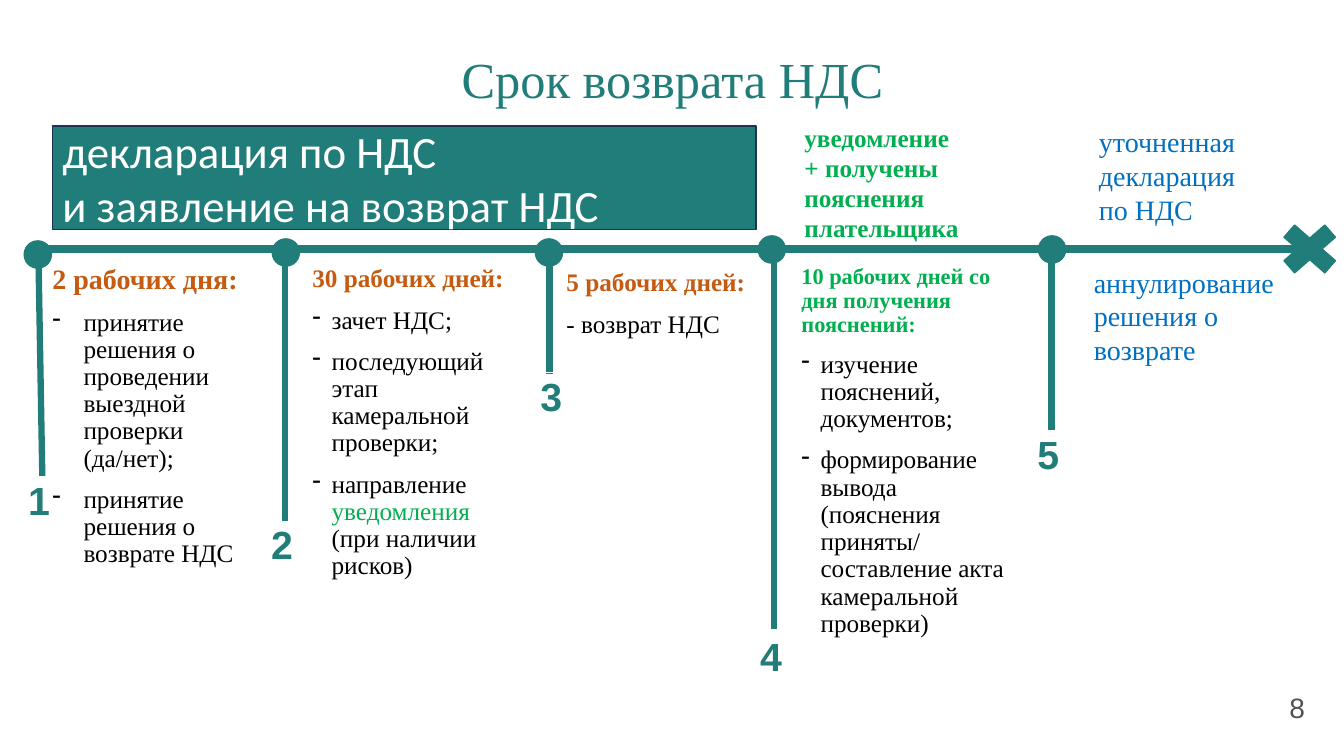
from lxml.etree import SubElement
from pptx import Presentation
from pptx.dml.color import RGBColor
from pptx.enum.shapes import MSO_CONNECTOR, MSO_SHAPE
from pptx.enum.text import MSO_ANCHOR, PP_ALIGN
from pptx.oxml.ns import qn
from pptx.util import Inches, Pt

TEAL = RGBColor(0x21, 0x7D, 0x79)
NAVY = RGBColor(0x1E, 0x32, 0x56)
ORANGE = RGBColor(0xC5, 0x5A, 0x11)
GREEN = RGBColor(0x00, 0xB0, 0x50)
BLUE = RGBColor(0x00, 0x70, 0xC0)
GRAY = RGBColor(0x52, 0x52, 0x52)
BLACK = RGBColor(0, 0, 0)
WHITE = RGBColor(0xFF, 0xFF, 0xFF)
SERIF = "Times New Roman"
DOT = 0.27

STAGES = [
    ((0.24, 2.39), (0.38, 2.47), (0.42, 4.73), (0.18, 4.73)),
    ((2.7, 2.37), (2.83, 2.5), (2.83, 5.18), (2.59, 5.17)),
    ((5.31, 2.37), (5.45, 2.46), (5.45, 3.71), (5.26, 3.7)),
    ((7.52, 2.34), (7.68, 2.47), (7.68, 6.24), (7.44, 6.28)),
    ((10.3, 2.34), (10.43, 2.47), (10.43, 4.27), (10.19, 4.27)),
]

DETAILS = [
    ((0.42, 2.58, 2.28, 3.35), ("2 рабочих дня:", 20, ORANGE), 0.31, [
        [("принятие решения о проведении выездной проверки (да/нет);", BLACK)],
        [("принятие решения о возврате НДС", BLACK)],
    ]),
    ((3, 2.59, 2.15, 3.66), ("30 рабочих дней:", 18, ORANGE), 0.19, [
        [("зачет НДС;", BLACK)],
        [("последующий этап камеральной проверки;", BLACK)],
        [("направление ", BLACK), ("уведомления", GREEN), (" (при наличии рисков)", BLACK)],
    ]),
    ((5.52, 2.63, 1.98, 0.92), ("5 рабочих дней:", 18, ORANGE), 0, [
        [("- возврат НДС", BLACK)],
    ]),
    ((7.85, 2.58, 2.28, 3.95),
     ("10 рабочих дней со дня получения пояснений:", 16, GREEN), 0.19, [
        [("изучение пояснений, документов;", BLACK)],
        [("формирование вывода (пояснения приняты/ составление акта камеральной проверки)",
          BLACK)],
    ]),
]


def add_run(paragraph, text, size, color, font=SERIF, bold=False):
    """Append one formatted run."""
    run = paragraph.add_run()
    run.text = text
    run.font.name = font
    run.font.size = Pt(size)
    run.font.bold = bold
    run.font.color.rgb = color


def add_paragraph(frame, first, spaced=False):
    """Return the first or a new left-aligned paragraph, tight and spaced on request."""
    paragraph = frame.paragraphs[0] if first else frame.add_paragraph()
    paragraph.alignment = PP_ALIGN.LEFT
    if spaced:
        paragraph.line_spacing = 0.9
        paragraph.space_before = Pt(10)
    return paragraph


def add_dash(paragraph, indent):
    """Give a paragraph a hanging dash bullet."""
    properties = paragraph._p.get_or_add_pPr()
    properties.set("marL", str(Inches(indent)))
    properties.set("indent", str(-Inches(indent)))
    SubElement(properties, qn("a:buChar")).set("char", "-")


def add_frame(slide, box, anchor=MSO_ANCHOR.TOP):
    """Add a wrapping text box and return its text frame."""
    frame = slide.shapes.add_textbox(*map(Inches, box)).text_frame
    frame.word_wrap = True
    frame.vertical_anchor = anchor
    return frame


def add_lines(frame, lines, size, color, font=SERIF, bold=False, spaced=False):
    """Fill a frame with equally formatted paragraphs."""
    for index, line in enumerate(lines):
        add_run(add_paragraph(frame, index == 0, spaced), line, size, color, font, bold)


def add_figure(slide, kind, box, fill, outline, width=1):
    """Add a preset shape without a shadow."""
    figure = slide.shapes.add_shape(kind, *map(Inches, box))
    figure.shadow.inherit = False
    if fill is None:
        figure.fill.background()
    else:
        figure.fill.solid()
        figure.fill.fore_color.rgb = fill
    figure.line.color.rgb = outline
    figure.line.width = Pt(width)
    return figure


def add_line(slide, start, end, width):
    """Add a straight teal line."""
    line = slide.shapes.add_connector(MSO_CONNECTOR.STRAIGHT, *map(Inches, start + end))
    line.line.color.rgb = TEAL
    line.line.width = Pt(width)
    SubElement(line._element.spPr, qn("a:effectLst"))


def add_details(slide, box, heading, indent, items):
    """Add a stage's deadline heading and its actions."""
    frame = add_frame(slide, box)
    text, size, color = heading
    add_run(add_paragraph(frame, True, True), text, size, color, bold=True)
    for item in items:
        paragraph = add_paragraph(frame, False, True)
        if indent:
            add_dash(paragraph, indent)
        for words, shade in item:
            add_run(paragraph, words, 18, shade)


def add_number(slide, number, corner):
    """Add a stage number below its stem."""
    label = add_figure(slide, MSO_SHAPE.RECTANGLE, corner + (0.48, 0.53), None, WHITE, 0.75)
    label.text_frame.vertical_anchor = MSO_ANCHOR.TOP
    add_lines(label.text_frame, [str(number)], 28, TEAL, "Arial", True, True)


def main():
    """Build the VAT refund timeline slide."""
    deck = Presentation()
    deck.slide_width, deck.slide_height = Inches(13.33), Inches(7.5)
    slide = deck.slides.add_slide(deck.slide_layouts[6])

    title = add_frame(slide, (0.92, 0.55, 11.5, 0.54), MSO_ANCHOR.MIDDLE)
    add_lines(title, ["Срок возврата НДС"], 36, TEAL)
    title.paragraphs[0].alignment = PP_ALIGN.CENTER
    title.paragraphs[0].line_spacing = 0.9
    page_number = add_frame(slide, (12.69, 6.84, 0.39, 0.39))
    add_lines(page_number, ["8"], 20, GRAY, "Arial", spaced=True)

    add_line(slide, (0.38, 2.47), (12.96, 2.47), 6)
    for details in DETAILS:
        add_details(slide, *details)
    cancellation = add_frame(slide, (10.75, 2.58, 2.2, 1.11))
    add_lines(cancellation, ["аннулирование решения о возврате"], 20, BLUE)

    declaration = add_figure(slide, MSO_SHAPE.RECTANGLE, (0.52, 1.25, 6.98, 1.03), TEAL, NAVY)
    add_lines(declaration.text_frame, ["декларация по НДС", "и заявление на возврат НДС"],
              32, WHITE, "Calibri")
    notice = add_frame(slide, (7.88, 1.17, 1.83, 1.28), MSO_ANCHOR.MIDDLE)
    add_lines(notice, ["уведомление", "+ получены пояснения плательщика"], 18, GREEN, bold=True)
    correction = add_frame(slide, (10.8, 1.19, 1.89, 1.11))
    add_lines(correction, ["уточненная декларация по НДС"], 20, BLUE)

    for number, (dot, top, bottom, label) in enumerate(STAGES, 1):
        add_line(slide, top, bottom, 4.5)
        add_figure(slide, MSO_SHAPE.FLOWCHART_CONNECTOR, dot + (DOT, DOT), TEAL, TEAL)
        add_number(slide, number, label)
    add_figure(slide, MSO_SHAPE.MATH_MULTIPLY, (12.6, 2.13, 0.78, 0.68), TEAL, TEAL)

    deck.save("out.pptx")


if __name__ == "__main__":
    main()
